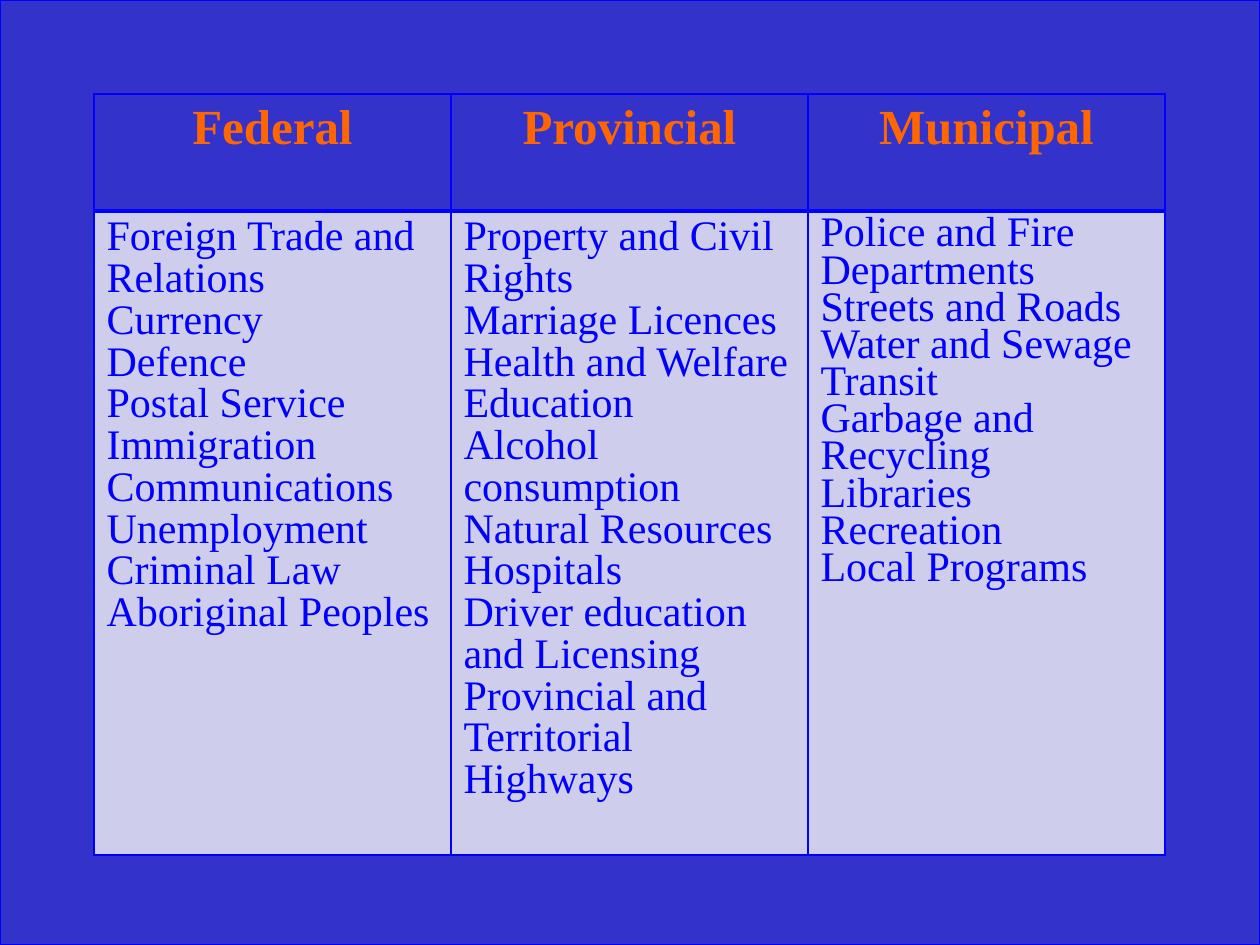
from lxml.etree import SubElement
from pptx import Presentation
from pptx.dml.color import RGBColor
from pptx.enum.shapes import MSO_SHAPE
from pptx.enum.text import PP_ALIGN
from pptx.oxml.ns import qn
from pptx.util import Emu, Pt

BACKGROUND = RGBColor(0x33, 0x33, 0xCC)
BLUE = RGBColor(0x00, 0x00, 0xFF)
ORANGE = RGBColor(0xFF, 0x66, 0x00)
LAVENDER = RGBColor(0xCE, 0xCE, 0xEC)

PX_PER_INCH = 126
WIDTH, HEIGHT = 1260, 945

# Level of government, line spacing, responsibilities
GOVERNMENTS = [
    ("Federal", 0.9, [
        "Foreign Trade and Relations", "Currency", "Defence",
        "Postal Service", "Immigration", "Communications",
        "Unemployment", "Criminal Law", "Aboriginal Peoples"]),
    ("Provincial", 0.9, [
        "Property and Civil Rights", "Marriage Licences",
        "Health and Welfare", "Education", "Alcohol consumption",
        "Natural Resources", "Hospitals",
        "Driver education and Licensing",
        "Provincial and Territorial Highways"]),
    ("Municipal", 0.8, [
        "Police and Fire Departments", "Streets and Roads",
        "Water and Sewage", "Transit", "Garbage and Recycling",
        "Libraries", "Recreation", "Local Programs"]),
]

HEADER_FONT = {"name": "Times New Roman", "size": Pt(28), "bold": True}
BODY_FONT = {"name": "Times New Roman", "size": Pt(24), "bold": False}
HEADER_BORDERS = {"lnL": 1, "lnR": 1, "lnT": 1, "lnB": 3}
BODY_BORDERS = {"lnL": 1, "lnR": 1, "lnT": 3, "lnB": 1}


def px(length):
    return Emu(round(length * 914400 / PX_PER_INCH))


class SlideBuilder:
    def __init__(self, slide):
        self.slide = slide

    def background(self, color):
        fill = self.slide.background.fill
        fill.solid()
        fill.fore_color.rgb = color

    def panel(self, left, top, width, height, fill, line):
        shape = self.slide.shapes.add_shape(
            MSO_SHAPE.ACTION_BUTTON_CUSTOM,
            px(left), px(top), px(width), px(height))
        shape.shadow.inherit = False
        shape.fill.solid()
        shape.fill.fore_color.rgb = fill
        shape.line.color.rgb = line
        shape.line.width = Pt(0.75)

    def table(self, left, top, column_widths, row_heights):
        table = self.slide.shapes.add_table(
            len(row_heights), len(column_widths), px(left), px(top),
            px(sum(column_widths)), px(sum(row_heights))).table
        for column, width in zip(table.columns, column_widths):
            column.width = px(width)
        for row, height in zip(table.rows, row_heights):
            row.height = px(height)
        return table

    def cell(self, cell, lines, font, color, fill, borders, paragraph_format):
        self.borders(cell, borders)
        cell.fill.solid()
        cell.fill.fore_color.rgb = fill
        cell.text = "\n".join(lines)
        for paragraph in cell.text_frame.paragraphs:
            for name, value in paragraph_format.items():
                setattr(paragraph, name, value)
            run_font = paragraph.runs[0].font
            for name, value in font.items():
                setattr(run_font, name, value)
            run_font.color.rgb = color

    def borders(self, cell, widths):
        properties = cell._tc.get_or_add_tcPr()
        for side, width in widths.items():
            line = SubElement(properties, qn(f"a:{side}"), w=str(Pt(width)))
            solid = SubElement(line, qn("a:solidFill"))
            SubElement(solid, qn("a:srgbClr"), val=str(BLUE))


def main():
    presentation = Presentation()
    presentation.slide_width, presentation.slide_height = px(WIDTH), px(HEIGHT)
    builder = SlideBuilder(
        presentation.slides.add_slide(presentation.slide_layouts[6]))

    # Backdrop
    builder.background(BACKGROUND)
    builder.panel(0, 0, WIDTH, HEIGHT, BACKGROUND, BLUE)

    # Responsibilities by level of government
    table = builder.table(94, 94, [357] * len(GOVERNMENTS), [117, 644])
    for column, (level, spacing, duties) in enumerate(GOVERNMENTS):
        builder.cell(table.cell(0, column), [level], HEADER_FONT, ORANGE,
                     BACKGROUND, HEADER_BORDERS,
                     {"alignment": PP_ALIGN.CENTER})
        builder.cell(table.cell(1, column), duties, BODY_FONT, BLUE,
                     LAVENDER, BODY_BORDERS,
                     {"alignment": PP_ALIGN.LEFT, "line_spacing": spacing})

    presentation.save("out.pptx")


if __name__ == "__main__":
    main()
